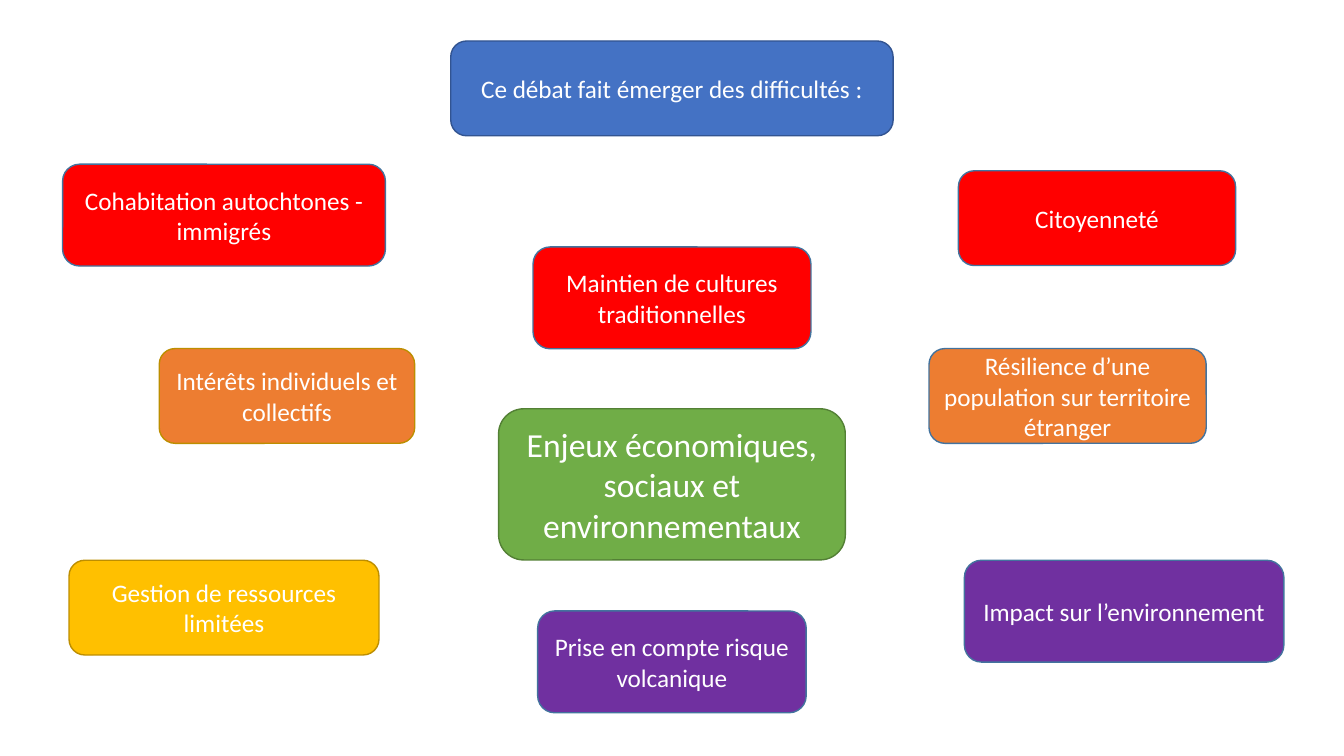
from pptx import Presentation
from pptx import util as u
from pptx.dml.color import RGBColor
from pptx.enum import shapes, text

HEX = {
    "blue": "4472C4", "navy": "325491", "red": "FF0000", "steel": "43739E",
    "orange": "ED7D31", "gold": "FFC000", "ochre": "BD8E00",
    "green": "70AD47", "moss": "538035", "purple": "7030A0", "white": "FFFFFF",
}
LOW, TALL, CORE = 67.7, 72.7, 108
MID = 480

# words, centre x, top, width, height, fill, line, size
BOXES = [
    ("Ce débat fait émerger des difficultés :", MID, 29.3, 316, LOW, "blue", "navy", 18),
    ("Cohabitation autochtones - immigrés", 160, 117.3, 230.6, TALL, "red", "steel", 18),
    ("Intérêts individuels et collectifs", 205, 249, 182.5, LOW, "orange", "ochre", 18),
    ("Enjeux économiques, sociaux et environnementaux", MID, 292, 247.7, CORE, "green", "moss", 24),
    ("Résilience d’une population sur territoire étranger", 762.6, 249, 198, LOW, "orange", "steel", 18),
    ("Maintien de cultures traditionnelles", MID, 176.4, 198.5, TALL, "red", "steel", 18),
    ("Gestion de ressources limitées", 160, 400.2, 221.4, LOW, "gold", "ochre", 18),
    ("Prise en compte risque volcanique", MID, 436.4, 191.8, TALL, "purple", "steel", 18),
    ("Citoyenneté", 783.6, 122, 198, LOW, "red", "steel", 18),
    ("Impact sur l’environnement", 803, 400.2, 228.2, TALL, "purple", "steel", 18),
]


def tint(name):
    return RGBColor.from_string(HEX[name])


def write(shape, words, size=18, color="white", font="Calibri"):
    frame = shape.text_frame
    frame.word_wrap = True
    frame.vertical_anchor = text.MSO_ANCHOR.MIDDLE
    para = frame.paragraphs[0]
    para.alignment = text.PP_ALIGN.CENTER
    run = para.add_run()
    run.text = words
    run.font.size = u.Pt(size)
    run.font.name = font
    run.font.color.rgb = tint(color)


def add_box(slide, words, mid, top, width, height, fill, line, size):
    box = slide.shapes.add_shape(
        shapes.MSO_SHAPE.ROUNDED_RECTANGLE,
        u.Pt(mid - width / 2), u.Pt(top), u.Pt(width), u.Pt(height))
    box.shadow.inherit = False
    box.fill.solid()
    box.fill.fore_color.rgb = tint(fill)
    box.line.color.rgb = tint(line)
    box.line.width = u.Pt(1)
    write(box, words, size=size)


def main():
    deck = Presentation()
    deck.slide_width, deck.slide_height = u.Pt(960), u.Pt(540)
    slide = deck.slides.add_slide(deck.slide_layouts[6])
    for box in BOXES:
        add_box(slide, *box)
    deck.save("out.pptx")


if __name__ == "__main__":
    main()
